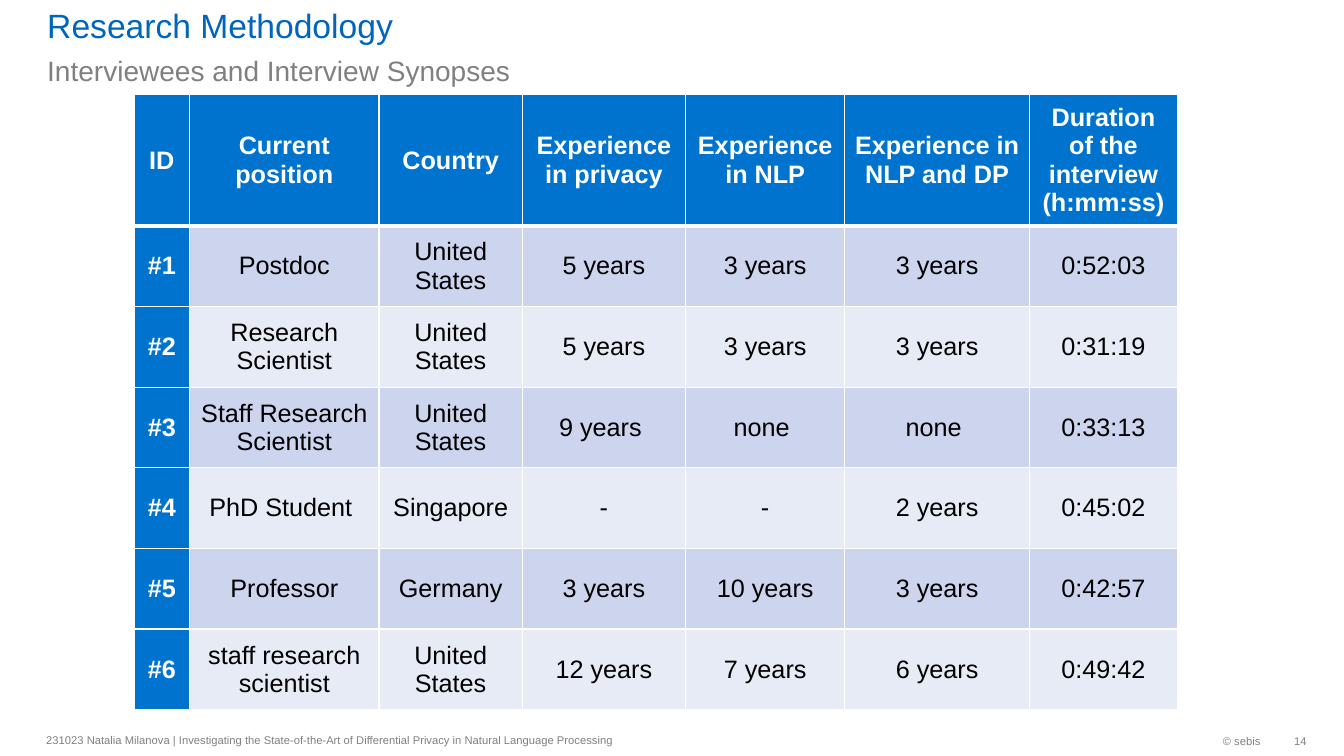
from lxml.etree import SubElement as Sub
from pptx import Presentation
from pptx.dml.color import RGBColor
from pptx.enum.text import MSO_ANCHOR as Anchor, PP_ALIGN as Align
from pptx.oxml.ns import qn
from pptx.util import Pt

SCALE = 9144  # EMU in one px, 100 px to the inch
BLUE, DEEP, GRAY, WHITE, BLACK = "0073CF", "0065BD", "808080", "FFFFFF", "000000"
BANDS = ("CCD5ED", "E7EBF6")

COLS = (55, 188, 142, 162, 158, 183, 147)
ROW = 80
HEAD = ("ID", "Current position", "Country", "Experience in privacy",
        "Experience in NLP", "Experience in NLP and DP",
        "Duration of the interview (h:mm:ss)")
PEOPLE = (
    ("Postdoc", "United States", "5 years", "3 years", "3 years", "0:52:03"),
    ("Research Scientist", "United States", "5 years", "3 years", "3 years", "0:31:19"),
    ("Staff Research Scientist", "United States", "9 years ", "none ", "none ", "0:33:13"),
    ("PhD Student ", "Singapore", "-", "-", "2 years", "0:45:02"),
    ("Professor", "Germany", "3 years", "10 years", "3 years", "0:42:57"),
    ("staff research scientist", "United States", "12 years", "7 years", "6 years", "0:49:42"),
)


def px(num):
    return int(num * SCALE)


def color(code):
    return RGBColor.from_string(code)


def apply(item, form):
    for key, value in form.items():
        setattr(item, key, value)


class Deck:
    def __init__(self, font):
        self.font = font
        self.show = Presentation()
        apply(self.show, {"slide_width": px(1333), "slide_height": px(750)})
        self.slide = self.show.slides.add_slide(self.show.slide_layouts[6])

    def label(self, frame, text, size, tint, align=Align.LEFT, bold=False):
        para = frame.paragraphs[0]
        para.alignment = align
        run = para.add_run()
        run.text = text
        apply(run.font, {"name": self.font, "size": Pt(size), "bold": bold})
        run.font.color.rgb = color(tint)

    def text(self, box, text, size, tint, anchor=Anchor.MIDDLE,
             align=Align.LEFT, pad=(10, 5, 10, 5)):
        """Add a text box; pad is left, top, right, bottom."""
        frame = self.slide.shapes.add_textbox(*map(px, box)).text_frame
        sides = ("margin_left", "margin_top", "margin_right", "margin_bottom")
        apply(frame, {"word_wrap": True, "vertical_anchor": anchor,
                      **dict(zip(sides, map(px, pad)))})
        self.label(frame, text, size, tint, align)

    def border(self, cell, widths):
        """Draw white cell edges; widths in points by side L, R, T, B."""
        props = cell._tc.get_or_add_tcPr()
        for side, width in widths.items():
            line = Sub(props, qn("a:ln" + side), w=str(int(Pt(width))))
            fill = Sub(line, qn("a:solidFill"))
            Sub(fill, qn("a:srgbClr"), val=WHITE)

    def table(self, left, top, rows):
        size = (sum(COLS), ROW * len(rows))
        grid = self.slide.shapes.add_table(
            len(rows), len(COLS), *map(px, (left, top, *size))).table
        apply(grid, {"first_col": True, "horz_banding": False})
        for col, width in zip(grid.columns, COLS):
            col.width = px(width)
        for r, row in enumerate(rows):
            grid.rows[r].height = px(ROW)
            edges = {"L": 1, "R": 1, "T": 3 if r == 1 else 1, "B": 3 if r == 0 else 1}
            for c, text in enumerate(row):
                cell, lead = grid.cell(r, c), r == 0 or c == 0
                self.border(cell, edges)
                cell.fill.solid()
                cell.fill.fore_color.rgb = color(BLUE if lead else BANDS[(r - 1) % 2])
                cell.vertical_anchor = Anchor.MIDDLE
                self.label(cell.text_frame, text, 18, WHITE if lead else BLACK,
                           Align.CENTER, lead)


def main():
    deck = Deck("Arial")
    deck.text((37, 6, 1158, 39), "Research Methodology", 24, DEEP,
              Anchor.BOTTOM, pad=(10, 0, 10, 0))
    deck.text((37, 48, 1158, 43), "Interviewees and Interview Synopses", 20, GRAY,
              Anchor.TOP)
    deck.table(133, 94, [HEAD] + [(f"#{n}", *row) for n, row in enumerate(PEOPLE, 1)])
    deck.text((36, 718, 630, 32),
              "231023 Natalia Milanova | Investigating the State-of-the-Art of "
              "Differential Privacy in Natural Language Processing", 8, GRAY)
    deck.text((1026, 719, 234, 32), "© sebis", 8, GRAY, align=Align.RIGHT)
    deck.text((1260, 719, 36, 32), "14", 8, GRAY, align=Align.RIGHT, pad=(10, 5, 0, 5))
    deck.show.save("out.pptx")


if __name__ == "__main__":
    main()
